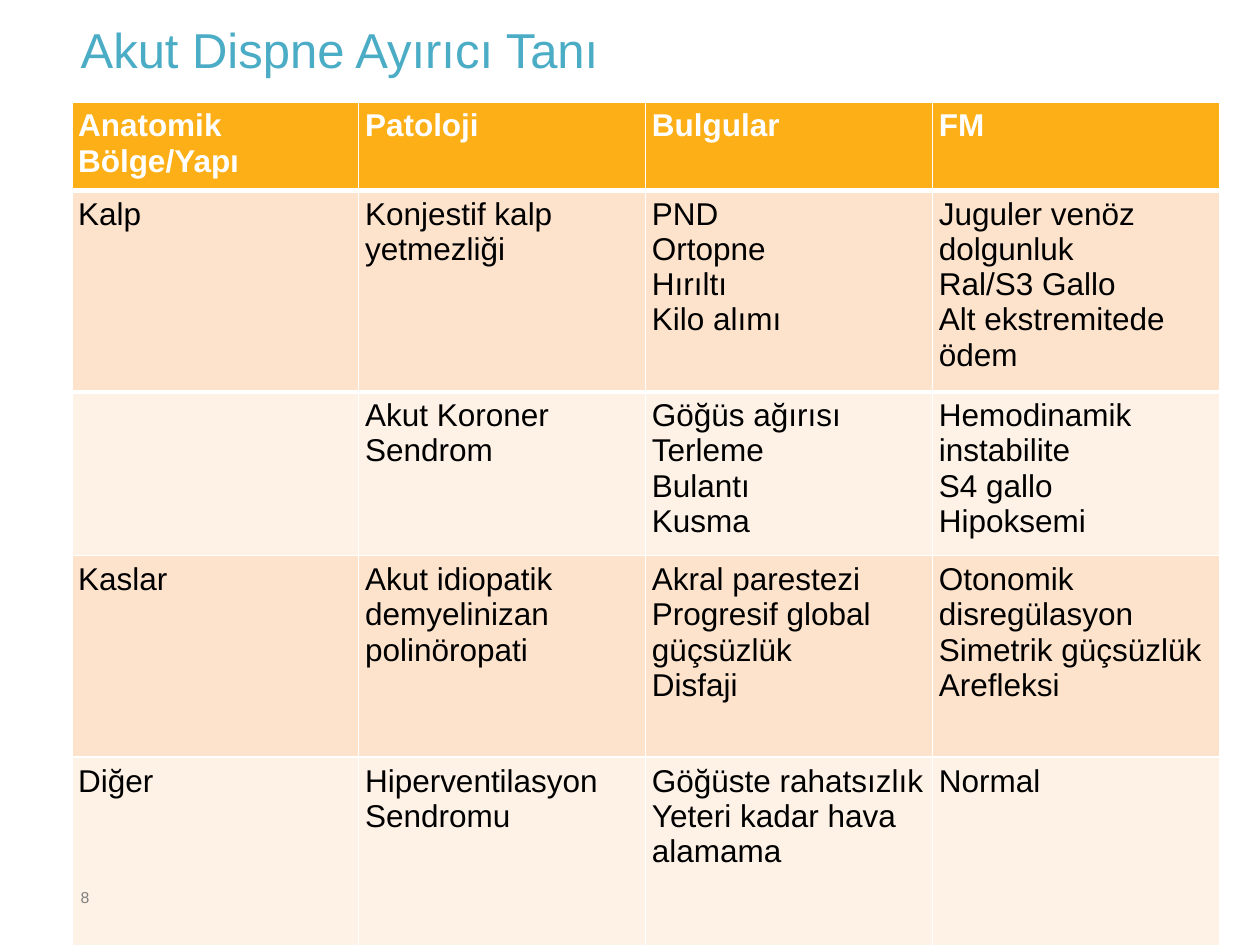
from lxml import etree
from pptx import Presentation
from pptx.dml.color import RGBColor
from pptx.enum.text import MSO_ANCHOR, PP_ALIGN
from pptx.oxml.ns import qn
from pptx.util import Inches, Pt

LEFT = PP_ALIGN.LEFT
TOP = MSO_ANCHOR.TOP
TEAL = RGBColor(0x4B, 0xAC, 0xC6)
AMBER = RGBColor(0xFC, 0xAF, 0x17)
PEACH = RGBColor(0xFE, 0xE3, 0xCC)
CREAM = RGBColor(0xFE, 0xF2, 0xE7)
WHITE = RGBColor(0xFF, 0xFF, 0xFF)
BLACK = RGBColor(0, 0, 0)
GREY = RGBColor(0x7F, 0x7F, 0x7F)
PAD = Inches(0.05)


def write(frame, text, size, color, bold=False):
    """Fill the first paragraph, with one run for each line."""
    frame.margin_left = frame.margin_right = PAD
    frame.margin_top = frame.margin_bottom = PAD
    para = frame.paragraphs[0]
    para.alignment = LEFT
    for i, line in enumerate(text.split("\n")):
        if i:
            para.add_line_break()
        run = para.add_run()
        run.text = line
        font = run.font
        font.name, font.size, font.bold = "Arial", Pt(size), bold
        font.color.rgb = color
    return para


def edge(cell, side, width):
    """Draw one white cell border."""
    props = cell._tc.get_or_add_tcPr()
    line = etree.SubElement(props, qn("a:ln" + side), w=str(Pt(width)))
    fill = etree.SubElement(line, qn("a:solidFill"))
    etree.SubElement(fill, qn("a:srgbClr"), val=str(WHITE))


prs = Presentation()
prs.slide_width, prs.slide_height = Inches(10), Inches(7.5)
slide = prs.slides.add_slide(prs.slide_layouts[5])

# Title
title = slide.shapes.title
title.left, title.top = Inches(0.59), Inches(0.21)
title.width, title.height = Inches(9.1), Inches(0.88)
title.text_frame.vertical_anchor = TOP
para = write(title.text_frame, "Akut Dispne Ayırıcı Tanı", 28, TEAL)
para.line_spacing = 0.75

# Table of diagnoses
rows = [
    ["Anatomik Bölge/Yapı", "Patoloji", "Bulgular", "FM"],
    ["Kalp", "Konjestif kalp yetmezliği",
     "PND\nOrtopne\nHırıltı\nKilo alımı",
     "Juguler venöz dolgunluk\nRal/S3 Gallo\nAlt ekstremitede ödem"],
    ["", "Akut Koroner Sendrom",
     "Göğüs ağırısı\nTerleme\nBulantı\nKusma",
     "Hemodinamik instabilite\nS4 gallo\nHipoksemi"],
    ["Kaslar", "Akut idiopatik demyelinizan polinöropati",
     "Akral parestezi\nProgresif global güçsüzlük\nDisfaji",
     "Otonomik disregülasyon\nSimetrik güçsüzlük\nArefleksi"],
    ["Diğer", "Hiperventilasyon Sendromu",
     "Göğüste rahatsızlık\nYeteri kadar hava alamama", "Normal"],
]
highs = [0.7, 1.6, 1.3, 1.6, 1.6]
fills = [AMBER, PEACH, CREAM, PEACH, CREAM]
rules = [1, 3, 3, 1, 1, 1]  # horizontal line widths, top to bottom
table = slide.shapes.add_table(
    len(rows), 4, Inches(0.57), Inches(0.81), Inches(9.11), Inches(6.8)
).table
for col in table.columns:
    col.width = Inches(9.11 / 4)
for r, row in enumerate(rows):
    table.rows[r].height = Inches(highs[r])
    for c, text in enumerate(row):
        cell = table.cell(r, c)
        for side, width in zip("LRTB", (1, 1, rules[r], rules[r + 1])):
            edge(cell, side, width)
        cell.fill.solid()
        cell.fill.fore_color.rgb = fills[r]
        cell.margin_left = cell.margin_right = PAD
        cell.margin_top = cell.margin_bottom = PAD
        if text:
            head = r == 0
            write(cell.text_frame, text, 18, WHITE if head else BLACK, head)
            # The cell owns its margins, so they are set above as well

# Slide number
box = slide.shapes.add_textbox(
    Inches(0.59), Inches(7), Inches(0.18), Inches(0.23))
box.text_frame.word_wrap = False
write(box.text_frame, "8", 9, GREY)

prs.save("out.pptx")
